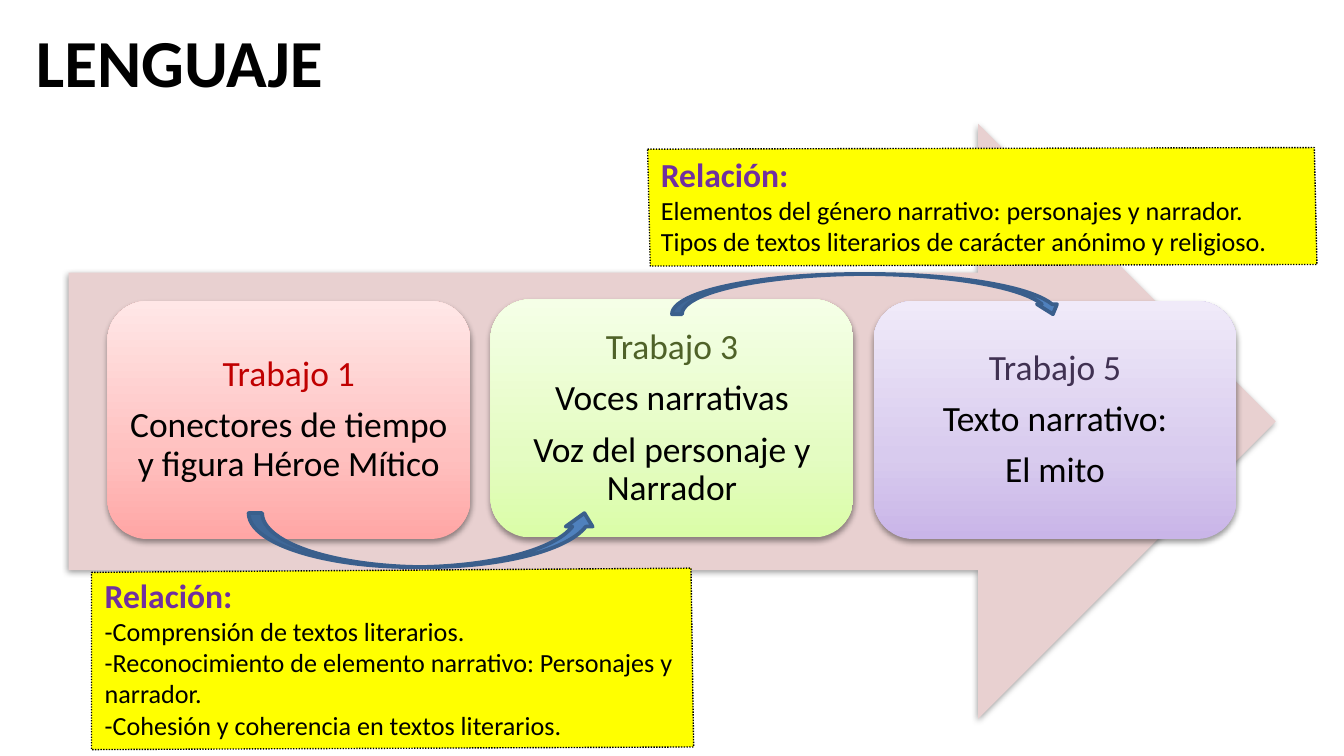
from copy import deepcopy

from pptx import Presentation
from pptx.dml.color import RGBColor
from pptx.enum.dml import MSO_LINE
from pptx.enum.shapes import MSO_SHAPE
from pptx.enum.text import MSO_ANCHOR, MSO_AUTO_SIZE, PP_ALIGN
from pptx.oxml import parse_xml
from pptx.oxml.ns import nsdecls, qn
from pptx.util import Cm, Pt

FONT = "Calibri"
BLACK = RGBColor(0x00, 0x00, 0x00)
YELLOW = RGBColor(0xFF, 0xFF, 0x00)
PURPLE = RGBColor(0x70, 0x30, 0xA0)
PALE_ROSE = RGBColor(0xE8, 0xD0, 0xD0)
BLUE = RGBColor(0x4F, 0x81, 0xBD)
DARK_BLUE = RGBColor(0x3A, 0x5F, 0x8C)
DARK_RED = RGBColor(0xC0, 0x00, 0x00)
OLIVE = RGBColor(0x4F, 0x62, 0x28)
PLUM = RGBColor(0x40, 0x31, 0x52)
REDS = [RGBColor(0xFF, 0xA6, 0xA5), RGBColor(0xFF, 0xC0, 0xBF), RGBColor(0xFF, 0xE7, 0xE7)]
GREENS = [RGBColor(0xDA, 0xFD, 0xA7), RGBColor(0xE4, 0xFC, 0xC2), RGBColor(0xF5, 0xFF, 0xE7)]
VIOLETS = [RGBColor(0xC9, 0xB5, 0xE8), RGBColor(0xD8, 0xCB, 0xEE), RGBColor(0xF0, 0xEA, 0xF9)]
STOPS = [0, 0.35, 1]

TASKS = [
    (["Trabajo 1", "Conectores de tiempo y figura Héroe Mítico"], DARK_RED, REDS, 5.69),
    (["Trabajo 3", "Voces narrativas", "Voz del personaje y Narrador"], OLIVE, GREENS, 5.66),
    (["Trabajo 5", "Texto narrativo:", "El mito"], PLUM, VIOLETS, 5.69),
]
UPPER_RELATION = [
    "Relación:",
    "Elementos del género narrativo: personajes y narrador.",
    "Tipos de textos literarios de carácter anónimo y religioso.",
]
LOWER_RELATION = [
    "Relación:",
    "-Comprensión de textos literarios.",
    "-Reconocimiento de elemento narrativo: Personajes y narrador.",
    "-Cohesión y coherencia en textos literarios.",
]


def write_lines(frame, lines, heading_style, body_style):
    """Fill the frame; a style is (size, colour, bold), the first line being the heading."""
    frame.word_wrap = True
    frame.text = "\n".join(lines)
    for index, paragraph in enumerate(frame.paragraphs):
        size, colour, bold = body_style if index else heading_style
        for run in paragraph.runs:
            run.font.name = FONT
            run.font.size = Pt(size)
            run.font.color.rgb = colour
            run.font.bold = bold


def add_soft_shadow(shape):
    shape.shadow.inherit = False
    shape._element.spPr.find(qn("a:effectLst")).append(parse_xml(
        f'<a:outerShdw {nsdecls("a")} blurRad="{Pt(3.1)}" dist="{Pt(1.6)}" dir="5400000" '
        'rotWithShape="0"><a:srgbClr val="000000"><a:alpha val="38000"/></a:srgbClr>'
        '</a:outerShdw>'))


def fill_upward_gradient(shape, colours):
    shape.fill.gradient()
    shape.fill.gradient_angle = 90
    stop_list = shape._element.spPr.find(".//" + qn("a:gsLst"))
    stop_list.append(deepcopy(stop_list[-1]))
    for stop, position, colour in zip(shape.fill.gradient_stops, STOPS, colours):
        stop.position = position
        stop.color.rgb = colour


def add_title(slide, left, top, width, height):
    title = slide.shapes.add_textbox(Cm(left), Cm(top), Cm(width), Cm(height))
    title.text_frame.margin_left = Cm(0.78)
    title.text_frame.vertical_anchor = MSO_ANCHOR.MIDDLE
    style = (36, BLACK, True)
    write_lines(title.text_frame, ["LENGUAJE"], style, style)


def add_task_card(slide, left, top, width, height, lines, heading_colour, gradient):
    card = slide.shapes.add_shape(
        MSO_SHAPE.ROUNDED_RECTANGLE, Cm(left), Cm(top), Cm(width), Cm(height))
    fill_upward_gradient(card, gradient)
    card.line.fill.background()
    add_soft_shadow(card)
    frame = card.text_frame
    frame.margin_left = frame.margin_right = frame.margin_top = frame.margin_bottom = Cm(0.2)
    frame.vertical_anchor = MSO_ANCHOR.MIDDLE
    write_lines(frame, lines, (19, heading_colour, False), (19, BLACK, False))
    for paragraph in frame.paragraphs:
        paragraph.alignment = PP_ALIGN.CENTER
        paragraph.line_spacing = 0.9
        paragraph.space_after = Pt(7)


def add_process(slide, left, top, width, height):
    """Broad arrow with the row of task cards on it."""
    arrow = slide.shapes.add_shape(
        MSO_SHAPE.RIGHT_ARROW, Cm(left), Cm(top), Cm(width), Cm(height))
    arrow.fill.solid()
    arrow.fill.fore_color.rgb = PALE_ROSE
    arrow.line.fill.background()
    add_soft_shadow(arrow)
    card_width, card_height, gap = 6.86, 4.5, 0.38
    for column, (lines, colour, gradient, card_top) in enumerate(TASKS):
        card_left = left + 0.73 + column * (card_width + gap)
        add_task_card(slide, card_left, card_top, card_width, card_height,
                      lines, colour, gradient)


def add_curved_link(slide, preset, left, top, width, height):
    link = slide.shapes.add_shape(preset, Cm(left), Cm(top), Cm(width), Cm(height))
    link.shadow.inherit = False
    link.fill.solid()
    link.fill.fore_color.rgb = BLUE
    link.line.color.rgb = DARK_BLUE
    link.line.width = Pt(2)


def add_relation_note(slide, corners, lines):
    """Dotted yellow note, slightly askew, through the given corners."""
    points = [(Cm(x), Cm(y)) for x, y in corners]
    outline = slide.shapes.build_freeform(*points[0])
    outline.add_line_segments(points[1:], close=True)
    note = outline.convert_to_shape()
    note.shadow.inherit = False
    note.fill.solid()
    note.fill.fore_color.rgb = YELLOW
    note.line.color.rgb = BLACK
    note.line.width = Pt(0.75)
    note.line.dash_style = MSO_LINE.ROUND_DOT
    frame = note.text_frame
    frame.vertical_anchor = MSO_ANCHOR.TOP
    write_lines(frame, lines, (18, PURPLE, True), (14, BLACK, False))
    frame.auto_size = MSO_AUTO_SIZE.SHAPE_TO_FIT_TEXT
    for paragraph in frame.paragraphs:
        paragraph.alignment = PP_ALIGN.LEFT


def main():
    deck = Presentation()
    deck.slide_width, deck.slide_height = Cm(25.4), Cm(14.29)
    slide = deck.slides.add_slide(deck.slide_layouts[6])
    add_title(slide, -0.1, -0.05, 22.86, 2.39)
    add_process(slide, 1.3, 2.34, 22.81, 11.25)
    add_curved_link(slide, MSO_SHAPE.CURVED_UP_ARROW, 4.7, 9.7, 6.6, 1.02)
    add_curved_link(slide, MSO_SHAPE.CURVED_DOWN_ARROW, 12.7, 5.18, 7.39, 0.76)
    add_relation_note(
        slide, [(12.24, 2.82), (24.84, 2.79), (24.89, 5), (12.29, 5.03)], UPPER_RELATION)
    add_relation_note(
        slide, [(1.73, 10.82), (13.06, 10.74), (13.11, 14.12), (1.73, 14.17)], LOWER_RELATION)
    deck.save("out.pptx")


if __name__ == "__main__":
    main()
